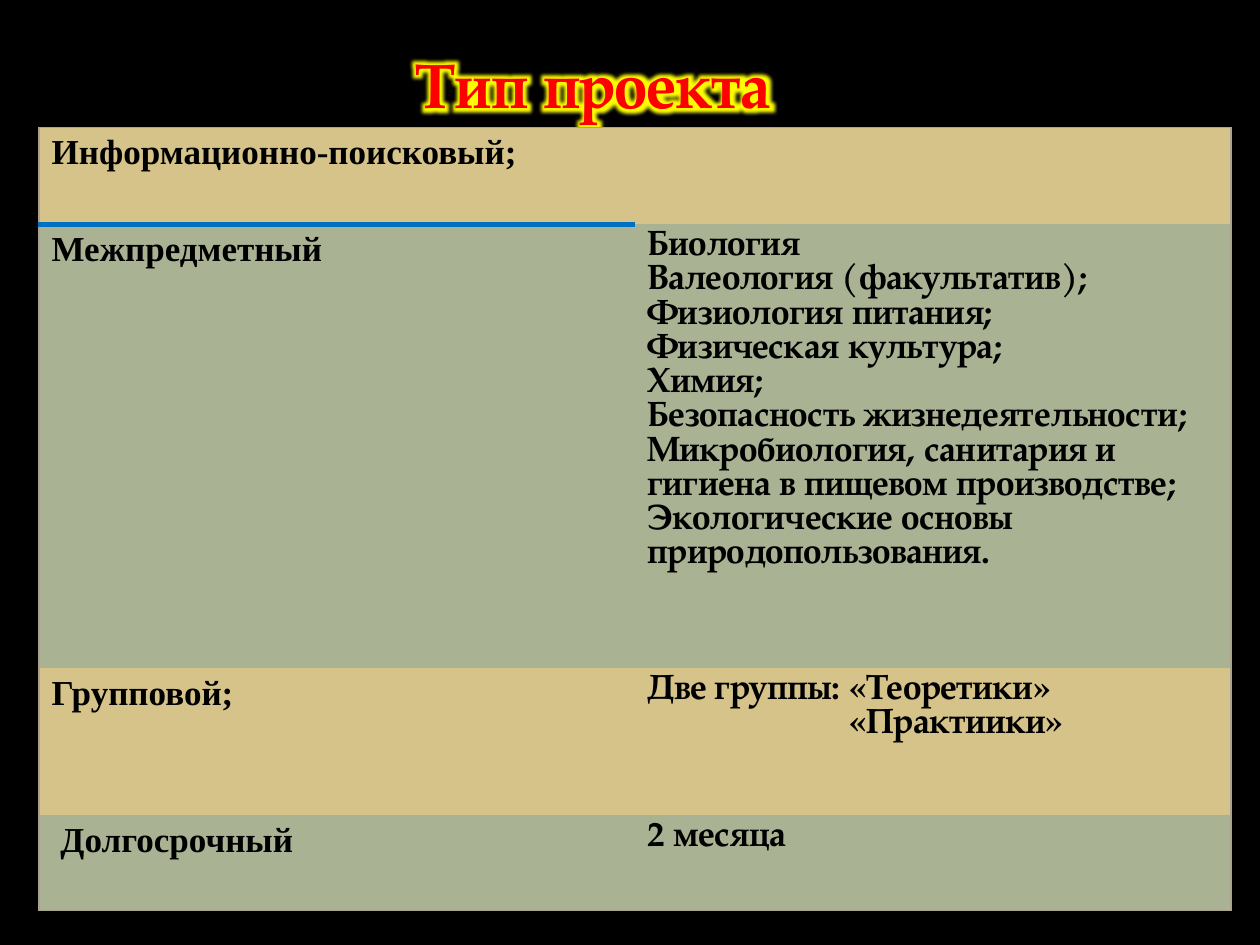
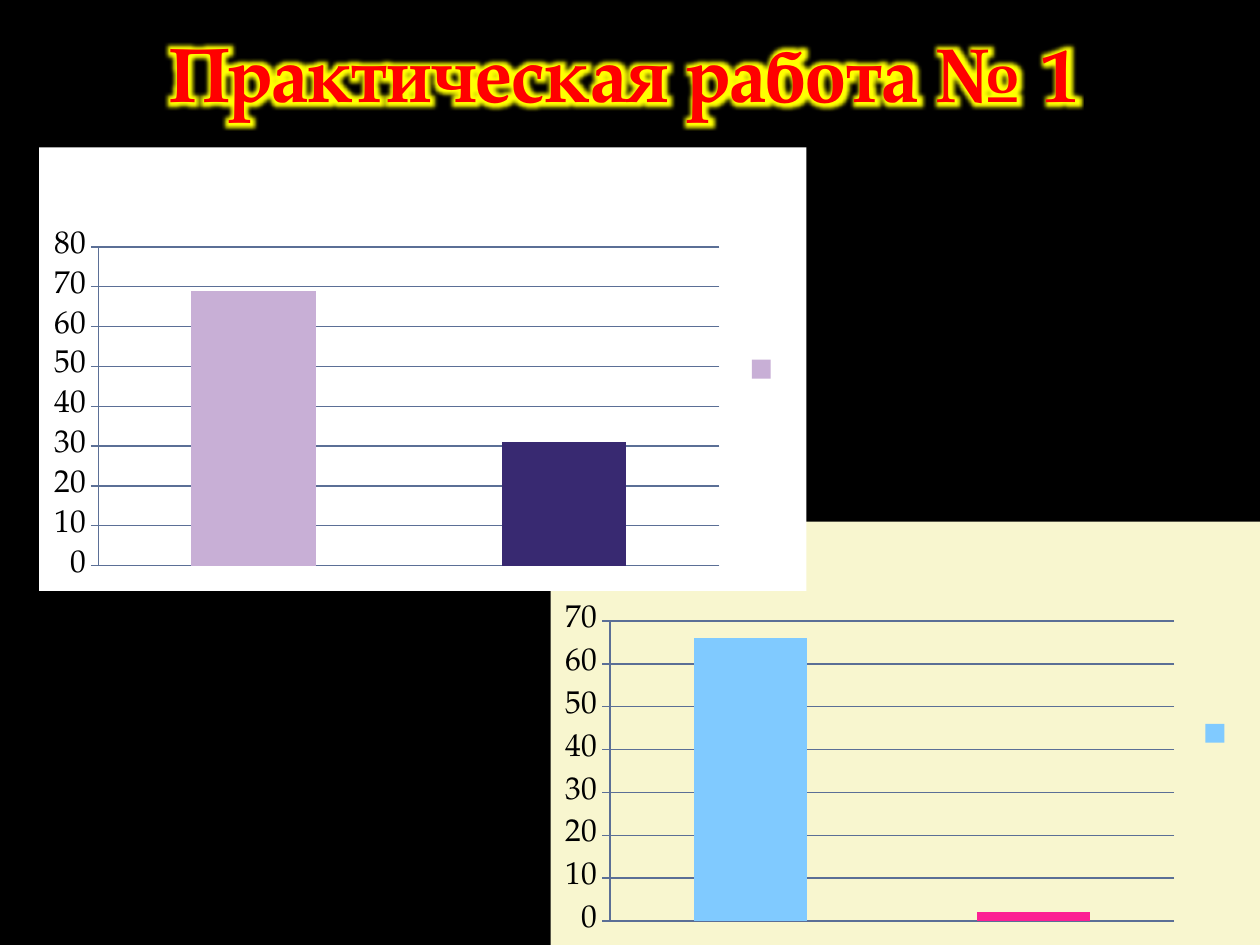
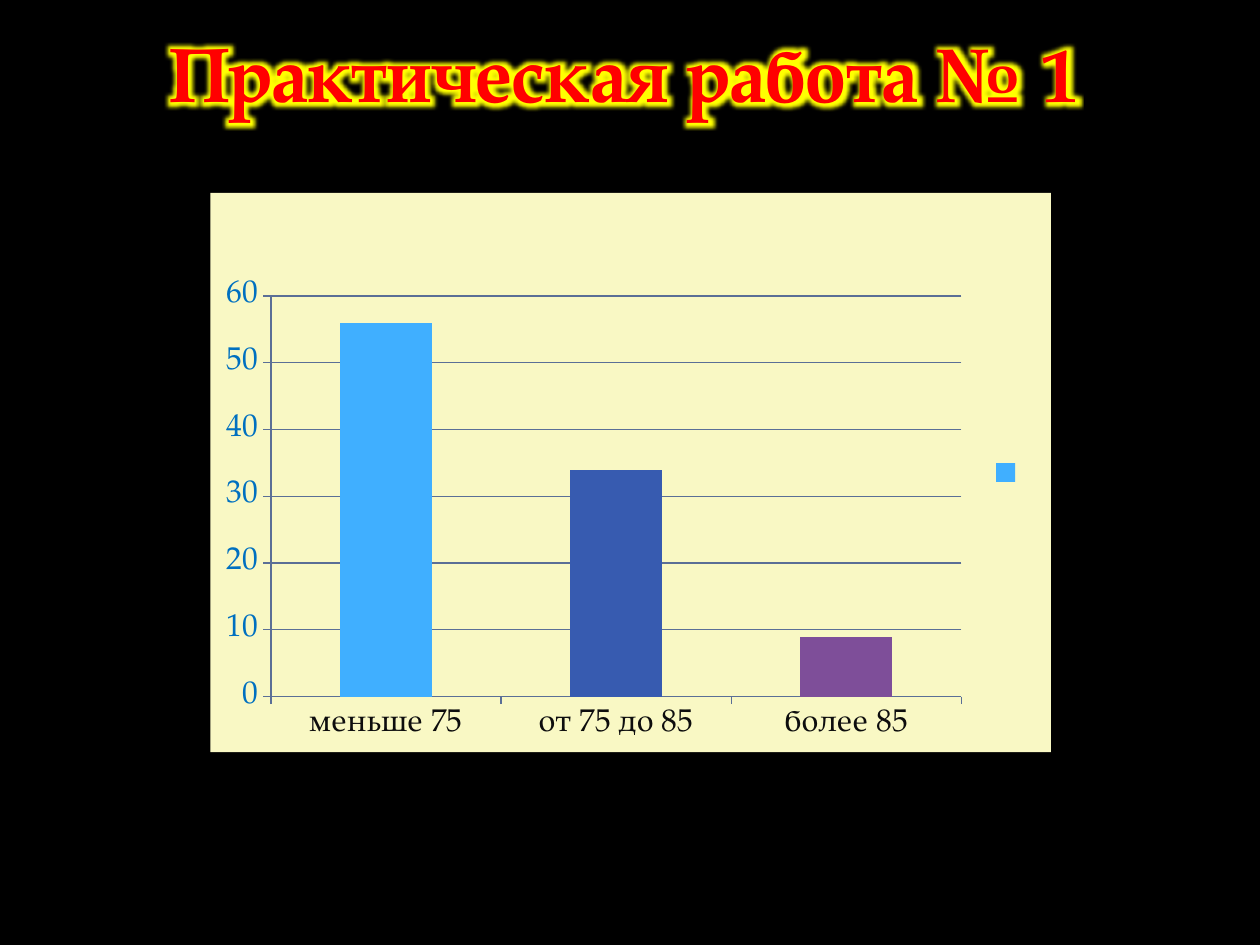
from dataclasses import dataclass

from lxml import etree
from pptx import Presentation
from pptx.chart.data import CategoryChartData
from pptx.dml.color import RGBColor
from pptx.enum.chart import XL_CHART_TYPE, XL_LEGEND_POSITION, XL_TICK_MARK
from pptx.enum.text import MSO_AUTO_SIZE
from pptx.oxml.ns import qn
from pptx.util import Inches, Pt

COLUMN_STACKED = XL_CHART_TYPE.COLUMN_STACKED
LEGEND_RIGHT = XL_LEGEND_POSITION.RIGHT
TICK_OUT, TICK_NONE = XL_TICK_MARK.OUTSIDE, XL_TICK_MARK.NONE
GROW = MSO_AUTO_SIZE.SHAPE_TO_FIT_TEXT

BLACK = RGBColor(0x00, 0x00, 0x00)
WHITE = RGBColor(0xFF, 0xFF, 0xFF)
RED = RGBColor(0xFF, 0x00, 0x00)
YELLOW = RGBColor(0xFF, 0xFF, 0x00)
BLUE = RGBColor(0x00, 0x70, 0xC0)
INK = RGBColor(0x0D, 0x0D, 0x0D)
TAN = RGBColor(0xD5, 0xC3, 0x89)
SAGE = RGBColor(0xAA, 0xB2, 0x94)
EDGE = RGBColor(0xAA, 0xA3, 0x8F)
GRID = RGBColor(0x5B, 0x6F, 0x96)
CREAM = RGBColor(0xF8, 0xF6, 0xCF)
LEMON = RGBColor(0xF9, 0xF8, 0xC4)
SKY = RGBColor(0x80, 0xCA, 0xFF)
PINK = RGBColor(0xFC, 0x20, 0x93)
LILAC = RGBColor(0xC8, 0xAF, 0xD6)
INDIGO = RGBColor(0x38, 0x29, 0x71)
AZURE = RGBColor(0x40, 0xAF, 0xFF)
COBALT = RGBColor(0x37, 0x5B, 0xB0)
PURPLE = RGBColor(0x7E, 0x4E, 0x99)

SERIF = "TeX Gyre Pagella"
TIMES = "Times New Roman"
NO_TABLE_STYLE = "{2D5ABB26-0587-4C30-8999-92F81FD0307C}"

Box = tuple[float, float, float, float]


@dataclass
class Title:
    text: str
    box: Box
    size: int


@dataclass
class Line:
    text: str
    indent: float = 0


@dataclass
class Row:
    height: float
    kind: Line
    details: list[Line]


@dataclass
class ColumnChart:
    box: Box
    plot: Box  # inches from the chart's top left corner
    fill: RGBColor
    values: dict[str, int]
    colors: list[RGBColor]
    top: int
    scale_color: RGBColor = BLACK
    label_color: RGBColor = BLACK
    show_labels: bool = False


PRACTICE_TITLE = Title("Практическая работа № 1", (1.25, 0.15, 7.5, 0.84), 44)

PROJECT_ROWS = [
    Row(0.77, Line("Информационно-поисковый;"), []),
    Row(3.52, Line("Межпредметный"), [
        Line("Биология"),
        Line("Валеология (факультатив);"),
        Line("Физиология питания;"),
        Line("Физическая культура;"),
        Line("Химия;"),
        Line("Безопасность жизнедеятельности;"),
        Line("Микробиология, санитария и гигиена в пищевом производстве;"),
        Line("Экологические основы природопользования."),
    ]),
    Row(1.17, Line("Групповой;"), [
        Line("Две группы: «Теоретики»"),
        Line("«Практиики»", 1.6),
    ]),
    Row(0.76, Line("Долгосрочный", 0.07), [Line("2 месяца")]),
]

PRACTICE_CHARTS = [
    ColumnChart((4.37, 4.14, 5.63, 3.36), (0.47, 0.79, 4.48, 2.38), CREAM,
                {"1": 66, "2": 2}, [SKY, PINK], 70),
    ColumnChart((0.31, 1.17, 6.09, 3.52), (0.47, 0.79, 4.93, 2.53), WHITE,
                {"1": 69, "2": 31}, [LILAC, INDIGO], 80),
]
RANGE_CHART = ColumnChart(
    (1.67, 1.53, 6.67, 4.44), (0.48, 0.82, 5.48, 3.18), LEMON,
    {"меньше 75": 56, "от 75 до 85": 34, "более 85": 9},
    [AZURE, COBALT, PURPLE], 60, BLUE, INK, True)


def add_solid_fill(parent, color: RGBColor) -> None:
    fill = etree.SubElement(parent, qn("a:solidFill"))
    etree.SubElement(fill, qn("a:srgbClr"), val=str(color))


def style_font(font, name: str, size: int, color: RGBColor) -> None:
    font.name, font.size, font.bold = name, Pt(size), True
    font.color.rgb = color


def add_slide(prs, title: Title):
    """Black slide with a glowing red title."""
    s = prs.slides.add_slide(prs.slide_layouts[6])
    s.background.fill.solid()
    s.background.fill.fore_color.rgb = BLACK

    sp = s.shapes.add_textbox(*map(Inches, title.box))
    tf = sp.text_frame
    tf.word_wrap = True
    tf.auto_size = GROW
    p = tf.paragraphs[0]
    style_font(p.font, SERIF, title.size, RED)
    r = p.add_run()
    r.text = title.text
    effects = etree.SubElement(r.font._element, qn("a:effectLst"))
    glow = etree.SubElement(effects, qn("a:glow"), rad=str(Pt(10)))
    etree.SubElement(glow, qn("a:srgbClr"), val=str(YELLOW))
    return s


def add_border(cell, side: str, color: RGBColor, width: float) -> None:
    tc_pr = cell._tc.get_or_add_tcPr()
    ln = etree.SubElement(tc_pr, qn(f"a:ln{side}"), w=str(Pt(width)))
    add_solid_fill(ln, color)


def write_lines(cell, lines: list[Line], font: str) -> None:
    tf = cell.text_frame
    for i, line in enumerate(lines):
        p = tf.add_paragraph() if i else tf.paragraphs[0]
        p.text = line.text
        style_font(p.font, font, 20, BLACK)
        if line.indent:
            p._p.get_or_add_pPr().set("marL", str(Inches(line.indent)))


def add_project_table(s, rows: list[Row]) -> None:
    height = sum(row.height for row in rows)
    frame = s.shapes.add_table(len(rows), 2, Inches(0.31), Inches(1.01),
                               Inches(9.46), Inches(height))
    table = frame.table
    table._tbl.tblPr.find(qn("a:tableStyleId")).text = NO_TABLE_STYLE
    last = len(rows) - 1
    for i, row in enumerate(rows):
        table.rows[i].height = Inches(row.height)
        kind, details = table.cell(i, 0), table.cell(i, 1)
        write_lines(kind, [row.kind], TIMES)
        write_lines(details, row.details, SERIF)
        for cell, side in ((kind, "L"), (details, "R")):
            add_border(cell, side, EDGE, 0.75)
            if i == 0:
                add_border(cell, "T", EDGE, 0.75)
            if i == last:
                add_border(cell, "B", EDGE, 0.75)
        # Blue rule under the first project type
        if i == 0:
            add_border(kind, "B", BLUE, 3)
        for cell in (kind, details):
            cell.fill.solid()
            cell.fill.fore_color.rgb = SAGE if i % 2 else TAN


def set_plot_layout(chart, box: Box, plot: Box) -> None:
    area = chart._chartSpace.chart.plotArea
    layout = area.find(qn("c:layout"))
    if layout is None:
        layout = etree.Element(qn("c:layout"))
        area.insert(0, layout)
    manual = etree.SubElement(layout, qn("c:manualLayout"))
    width, height = box[2:]
    parts = [n / whole for n, whole in zip(plot, (width, height) * 2)]
    settings = [("layoutTarget", "inner"), ("xMode", "edge"), ("yMode", "edge"),
                *zip("xywh", parts)]
    for tag, value in settings:
        etree.SubElement(manual, qn(f"c:{tag}"), val=str(value))


def set_chart_fill(chart, color: RGBColor) -> None:
    sp_pr = etree.Element(qn("c:spPr"))
    add_solid_fill(sp_pr, color)
    ln = etree.SubElement(sp_pr, qn("a:ln"))
    etree.SubElement(ln, qn("a:noFill"))
    chart._chartSpace.chart.addnext(sp_pr)


def style_line(line) -> None:
    line.color.rgb = GRID
    line.width = Pt(0.75)


def add_column_chart(s, column_chart: ColumnChart) -> None:
    data = CategoryChartData()
    data.categories = list(column_chart.values)
    data.add_series(" ", list(column_chart.values.values()))
    box = column_chart.box
    chart = s.shapes.add_chart(COLUMN_STACKED, *map(Inches, box), data).chart
    chart.font.name, chart.font.size = SERIF, Pt(18)
    chart.font.color.rgb = BLUE
    chart.has_title = True
    chart.chart_title.text_frame.text = " "
    set_plot_layout(chart, box, column_chart.plot)
    set_chart_fill(chart, column_chart.fill)

    # Legend
    chart.has_legend = True
    chart.legend.position = LEGEND_RIGHT
    chart.legend.include_in_layout = False
    chart.legend.font.color.rgb = column_chart.label_color

    # Axes
    val_axis, cat_axis = chart.value_axis, chart.category_axis
    val_axis.minimum_scale, val_axis.maximum_scale = 0, column_chart.top
    val_axis.major_unit = 10
    style_line(val_axis.major_gridlines.format.line)
    cat_axis.visible = column_chart.show_labels
    for axis, color in ((val_axis, column_chart.scale_color),
                        (cat_axis, column_chart.label_color)):
        axis.major_tick_mark, axis.minor_tick_mark = TICK_OUT, TICK_NONE
        axis.tick_labels.font.color.rgb = color
        style_line(axis.format.line)

    # Columns
    plot = chart.plots[0]
    plot.gap_width, plot.overlap = 150, 100
    plot.vary_by_categories = False
    series = plot.series[0]
    series.format.fill.solid()
    series.format.fill.fore_color.rgb = column_chart.colors[0]
    for i, color in enumerate(column_chart.colors[1:], start=1):
        fill = series.points[i].format.fill
        fill.solid()
        fill.fore_color.rgb = color


def main() -> None:
    prs = Presentation()
    prs.slide_width, prs.slide_height = Inches(10), Inches(7.5)

    # Project type
    s = add_slide(prs, Title("Тип проекта", (3.2, 0.31, 4.69, 0.71), 36))
    add_project_table(s, PROJECT_ROWS)

    # Practical work
    for charts in (PRACTICE_CHARTS, [RANGE_CHART]):
        s = add_slide(prs, PRACTICE_TITLE)
        for column_chart in charts:
            add_column_chart(s, column_chart)

    prs.save("out.pptx")


if __name__ == "__main__":
    main()
